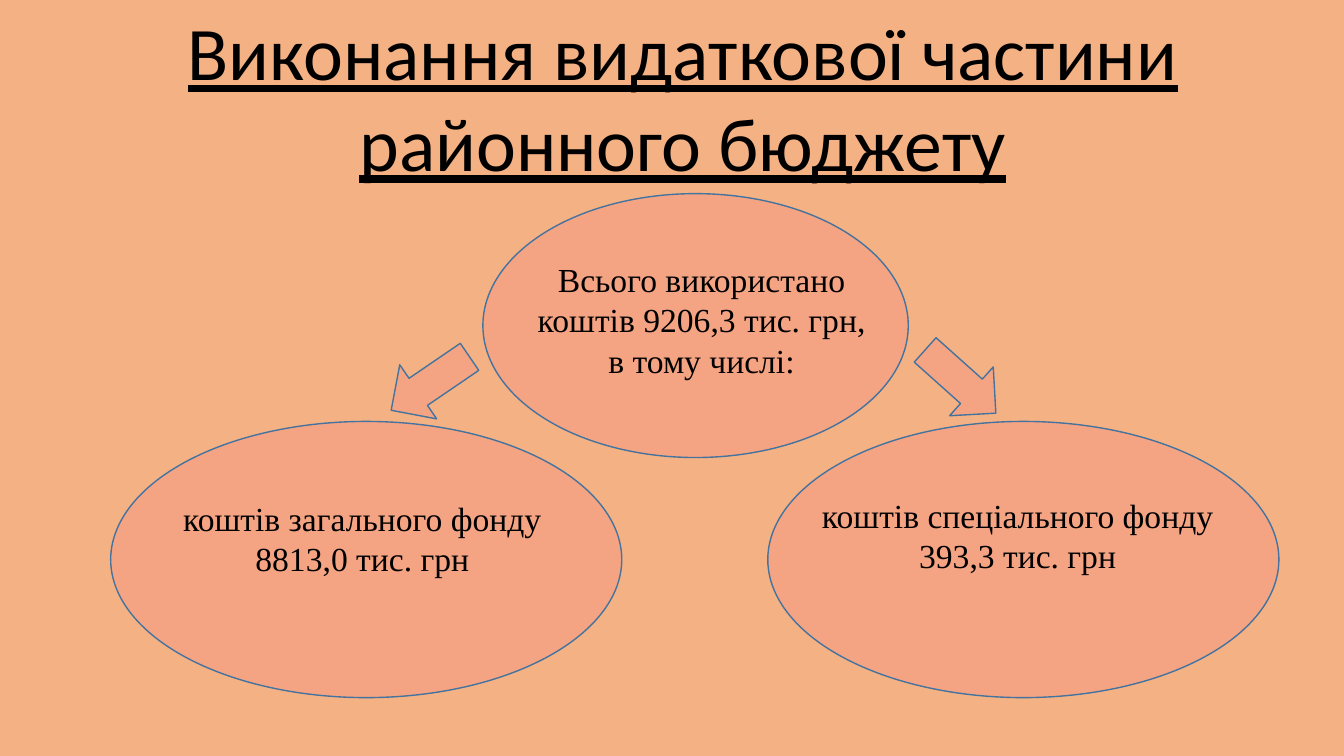
from pptx import Presentation
from pptx.dml.color import RGBColor
from pptx.enum.shapes import MSO_SHAPE as Shape
from pptx.enum.text import MSO_ANCHOR as Anchor, MSO_AUTO_SIZE as AutoSize, PP_ALIGN as Align
from pptx.util import Cm, Pt

BACKGROUND, FILL, OUTLINE, BLACK = "F4B183", "F5A483", "43739E", "000000"

TITLE = ["Виконання видаткової частини", "районного бюджету"]
TITLE_BOX = (4.34, 0, 25.73, 4.88)

# Boxes are left, top, width, height in centimetres
ELLIPSES = [
    (12.17, 4.88, 10.72, 6.65),
    (2.79, 10.62, 12.88, 6.96),
    (19.35, 10.62, 12.88, 6.96),
]
ARROWS = [
    ((23.01, 8.79, 2.39, 1.65), 41.8),
    ((9.65, 8.84, 2.39, 1.65), 145.7),
]
CAPTIONS = [
    ("Всього використано коштів 9206,3 тис. грн, в тому числі:", (13.11, 6.4, 9.14, 3.33)),
    ("коштів загального фонду 8813,0 тис. грн", (4.29, 12.42, 9.68, 2.31)),
    ("коштів спеціального фонду 393,3 тис. грн", (20.45, 12.34, 10.39, 2.31)),
]


def color(value):
    return RGBColor.from_string(value)


def lengths(box):
    return [Cm(value) for value in box]


def add_figure(slide, kind, box, rotation=0):
    shape = slide.shapes.add_shape(kind, *lengths(box))
    shape.rotation = rotation
    shape.shadow.inherit = False
    shape.fill.solid()
    shape.fill.fore_color.rgb = color(FILL)
    shape.line.color.rgb = color(OUTLINE)
    shape.line.width = Pt(1)


def add_centred_text(paragraph, text, font, size, underline=None):
    paragraph.alignment = Align.CENTER
    run = paragraph.add_run()
    run.text = text
    run.font.name = font
    run.font.size = Pt(size)
    run.font.underline = underline
    run.font.color.rgb = color(BLACK)


def add_title(slide):
    title = slide.shapes.title
    title.left, title.top, title.width, title.height = lengths(TITLE_BOX)
    frame = title.text_frame
    frame.word_wrap = False
    frame.auto_size = AutoSize.NONE
    frame.vertical_anchor = Anchor.TOP
    for index, line in enumerate(TITLE):
        paragraph = frame.add_paragraph() if index else frame.paragraphs[0]
        paragraph.space_before = Pt(0)
        add_centred_text(paragraph, line, "Calibri", 54, underline=True)


def add_caption(slide, text, box):
    frame = slide.shapes.add_textbox(*lengths(box)).text_frame
    frame.word_wrap = True
    add_centred_text(frame.paragraphs[0], text, "Times New Roman", 24)


def main():
    presentation = Presentation()
    presentation.slide_width, presentation.slide_height = Cm(33.87), Cm(19.05)
    slide = presentation.slides.add_slide(presentation.slide_layouts[5])
    slide.background.fill.solid()
    slide.background.fill.fore_color.rgb = color(BACKGROUND)

    add_title(slide)
    for box in ELLIPSES:
        add_figure(slide, Shape.OVAL, box)
    for box, rotation in ARROWS:
        add_figure(slide, Shape.RIGHT_ARROW, box, rotation)
    for text, box in CAPTIONS:
        add_caption(slide, text, box)
    presentation.save("out.pptx")


if __name__ == "__main__":
    main()
